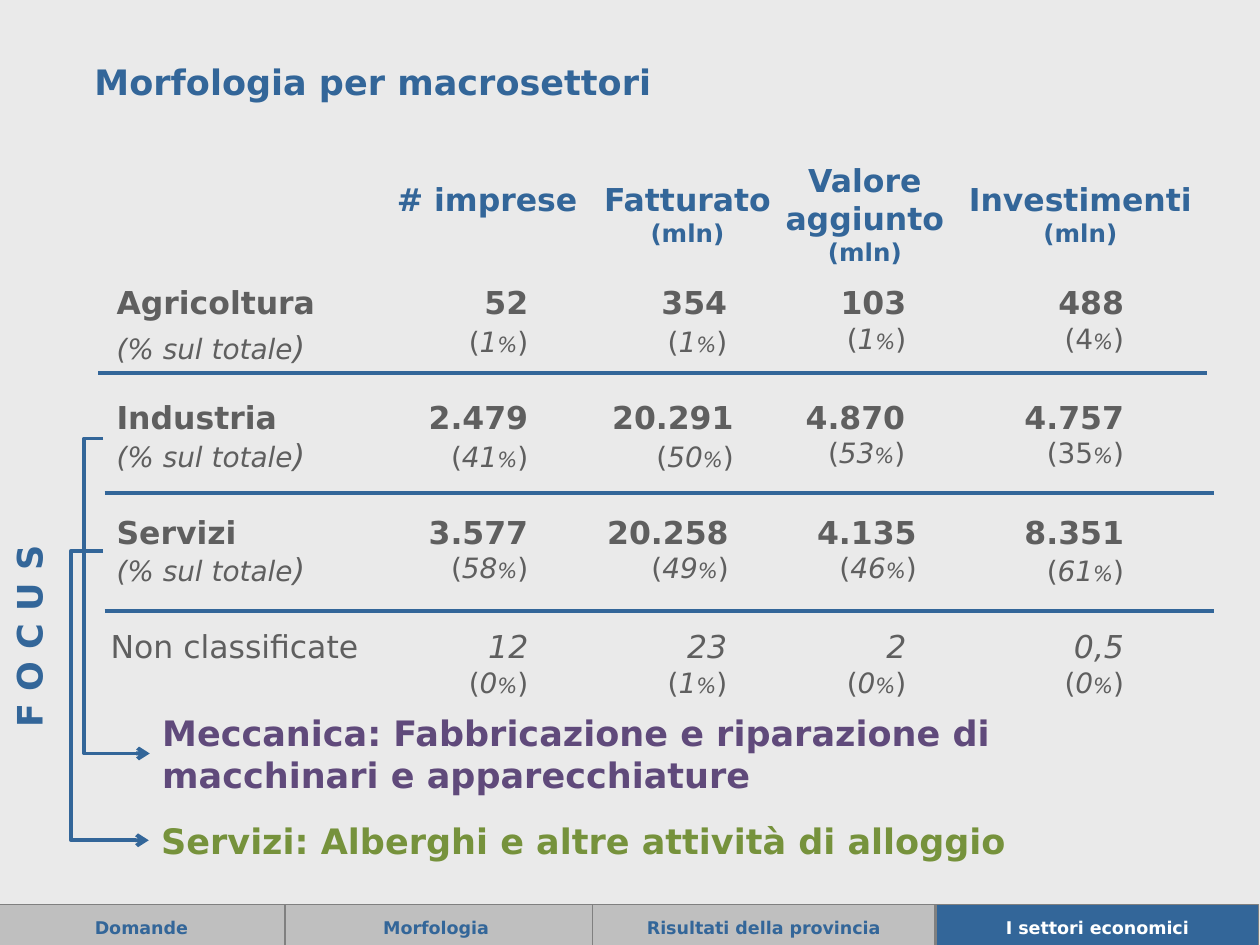
from lxml.etree import SubElement
from pptx import Presentation
from pptx.dml.color import RGBColor
from pptx.enum.shapes import MSO_CONNECTOR, MSO_SHAPE
from pptx.enum.text import MSO_ANCHOR, PP_ALIGN
from pptx.oxml.ns import qn
from pptx.util import Cm, Pt

BLUE, GRAY, PURPLE, GREEN = "336699", "5F5F5F", "604A7B", "76923C"
BACKGROUND, TAB_FILL, TAB_LINE, WHITE = "EAEAEA", "BFBFBF", "808080", "FFFFFF"
ROW_TOP, ROW_STEP = 5.59, 2.31


def color(value):
    return RGBColor.from_string(value)


class SlideBuilder:
    font_name = "DejaVu Sans"
    line_width = Pt(2.25)

    def __init__(self, slide):
        self.slide = slide
        slide.background.fill.solid()
        slide.background.fill.fore_color.rgb = color(BACKGROUND)

    def format_run(self, run, size, ink, bold=False, italic=False):
        font = run.font
        font.name, font.size, font.bold, font.italic = self.font_name, Pt(size), bold, italic
        font.color.rgb = color(ink)

    def fill_text(self, text_frame, lines, align, anchor):
        """Each line is a list of (text, size, color, bold, italic) runs."""
        text_frame.word_wrap = True
        text_frame.vertical_anchor = anchor
        for index, runs in enumerate(lines):
            paragraph = text_frame.paragraphs[0] if index == 0 else text_frame.add_paragraph()
            paragraph.alignment = align
            for text, *style in runs:
                run = paragraph.add_run()
                run.text = text
                self.format_run(run, *style)

    def title(self, text, left, top, width, height):
        shape = self.slide.shapes.title
        shape.left, shape.top, shape.width, shape.height = map(Cm, (left, top, width, height))
        self.fill_text(shape.text_frame, [[(text, 20, BLUE, True)]],
                       PP_ALIGN.LEFT, MSO_ANCHOR.MIDDLE)

    def text(self, lines, left, top, width, height, align=PP_ALIGN.LEFT,
             anchor=MSO_ANCHOR.TOP, gap=0):
        shape = self.slide.shapes.add_textbox(*map(Cm, (left, top, width, height)))
        self.fill_text(shape.text_frame, lines, align, anchor)
        if gap:
            shape.text_frame.paragraphs[-1].space_before = Pt(gap)
        return shape

    def value(self, value, share, right, top, width, gap, classified, italic_share):
        lines = [[(value, 18, GRAY, classified, not classified)],
                 [("(", 16, GRAY), (share, 16, GRAY, False, italic_share),
                  ("%", 12, GRAY, False, True), (")", 16, GRAY)]]
        self.text(lines, right - width, top, width, 1.7, PP_ALIGN.RIGHT, gap=gap)

    def connector(self, kind, start_x, start_y, end_x, end_y):
        connector = self.slide.shapes.add_connector(
            kind, *map(Cm, (start_x, start_y, end_x, end_y)))
        connector.line.color.rgb = color(BLUE)
        connector.line.width = self.line_width
        SubElement(connector._element.spPr, qn("a:effectLst"))
        return connector

    def focus_arrow(self, start_x, start_y, end_x, end_y, bend):
        connector = self.connector(MSO_CONNECTOR.ELBOW, start_x, start_y, end_x, end_y)
        geometry = connector._element.spPr.find(qn("a:prstGeom"))
        adjustments = geometry.find(qn("a:avLst"))
        if adjustments is None:
            adjustments = SubElement(geometry, qn("a:avLst"))
        SubElement(adjustments, qn("a:gd"), name="adj1", fmla=f"val {bend}")
        SubElement(connector.line._get_or_add_ln(), qn("a:tailEnd"), type="arrow")

    def tab(self, text, left, width, fill, ink):
        shape = self.slide.shapes.add_shape(
            MSO_SHAPE.RECTANGLE, *map(Cm, (left, 18.24, width, 0.91)))
        shape.shadow.inherit = False
        shape.fill.solid()
        shape.fill.fore_color.rgb = color(fill)
        shape.line.color.rgb = color(TAB_LINE)
        shape.line.width = Pt(0.75)
        self.fill_text(shape.text_frame, [[(text, 10, ink, True)]],
                       PP_ALIGN.CENTER, MSO_ANCHOR.MIDDLE)
        shape.text_frame.word_wrap = False


def main():
    presentation = Presentation()
    presentation.slide_width, presentation.slide_height = Cm(25.4), Cm(19.05)
    builder = SlideBuilder(presentation.slides.add_slide(presentation.slide_layouts[5]))
    builder.title("Morfologia per macrosettori", 1.65, 0.53, 22.71, 2.21)

    # Column headings: text, unit, left, top, width, height
    headings = [
        ("# imprese", None, 7.7, 3.51, 4.24, 1.02),
        ("Fatturato", "(mln)", 11.46, 3.51, 4.8, 1.63),
        ("Valore aggiunto", "(mln)", 15.49, 3.12, 3.89, 2.39),
        ("Investimenti", "(mln)", 19.2, 3.51, 5.16, 1.63),
    ]
    for text, unit, *place in headings:
        lines = [[(text, 18, BLUE, True)]]
        if unit:
            lines.append([(unit, 14, BLUE, True)])
        builder.text(lines, *place, align=PP_ALIGN.CENTER)

    # Sectors: name, label left, label gap, cells of (value, share, right, width, gap)
    sectors = [
        ("Agricoltura", 2.1, 4, [
            ("52", "1", 10.9, 3, 2), ("354", "1", 14.91, 2.39, 2),
            ("103", "1", 18.52, 2.39, 0), ("488", "4", 22.91, 2.39, 0)]),
        ("Industria", 2.1, 0, [
            ("2.479", "41", 10.9, 3, 2), ("20.291", "50", 15.04, 3, 2),
            ("4.870", "53", 18.5, 2.9, 0), ("4.757", "35", 22.91, 2.9, 0)]),
        ("Servizi", 2.1, 0, [
            ("3.577", "58", 10.9, 3, 0), ("20.258", "49", 14.94, 3, 0),
            ("4.135", "46", 18.73, 2.59, 0), ("8.351", "61", 22.91, 3, 2)]),
        ("Non classificate", 1.98, 0, [
            ("12", "0", 10.9, 3, 0), ("23", "1", 14.91, 2.39, 0),
            ("2", "0", 18.52, 2.39, 0), ("0,5", "0", 22.91, 2.39, 0)]),
    ]
    upright_shares = {"4", "35"}
    for row, (name, left, label_gap, cells) in enumerate(sectors):
        top = ROW_TOP + row * ROW_STEP
        classified = name != "Non classificate"
        lines = [[(name, 18, GRAY, classified)]]
        if classified:
            lines.append([("(% sul totale", 16, GRAY, False, True),
                          (")", 18, GRAY, False, True)])
        builder.text(lines, left, top, 6.2, 1.9 if classified else 1.02, gap=label_gap)
        for value, share, right, width, gap in cells:
            builder.value(value, share, right, top, width, gap, classified,
                          share not in upright_shares)

    # Row separators
    for left, y in ((1.98, 7.52), (2.11, 9.93), (2.11, 12.32)):
        builder.connector(MSO_CONNECTOR.STRAIGHT, left, y, left + 22.36, y)

    # Focus: vertical label, arrows and sectors examined
    label = builder.text([[("F O C U S", 20, BLUE, True)]], -1.8, 12.27, 4.75, 1.12,
                         PP_ALIGN.CENTER, MSO_ANCHOR.MIDDLE)
    label.rotation = 270
    builder.focus_arrow(2.08, 8.84, 3.02, 15.19, -40800)
    builder.focus_arrow(2.08, 11.1, 3, 16.94, -69700)
    topics = [
        ("Meccanica: Fabbricazione e riparazione di macchinari e apparecchiature",
         PURPLE, 3.02, 14.22, 1.96),
        ("Servizi: Alberghi e altre attività di alloggio", GREEN, 3, 16.38, 1.12),
    ]
    for text, ink, left, top, height in topics:
        builder.text([[(text, 20, ink, True)]], left, top, 21.46, height,
                     anchor=MSO_ANCHOR.MIDDLE)

    # Navigation tabs
    builder.tab("Morfologia", 5.64, 6.3, TAB_FILL, BLUE)
    builder.tab("Risultati della provincia", 11.94, 6.91, TAB_FILL, BLUE)
    builder.tab("I settori economici", 18.87, 6.5, BLUE, WHITE)
    builder.tab("Domande", -0.05, 5.8, TAB_FILL, BLUE)

    presentation.save("out.pptx")


if __name__ == "__main__":
    main()
